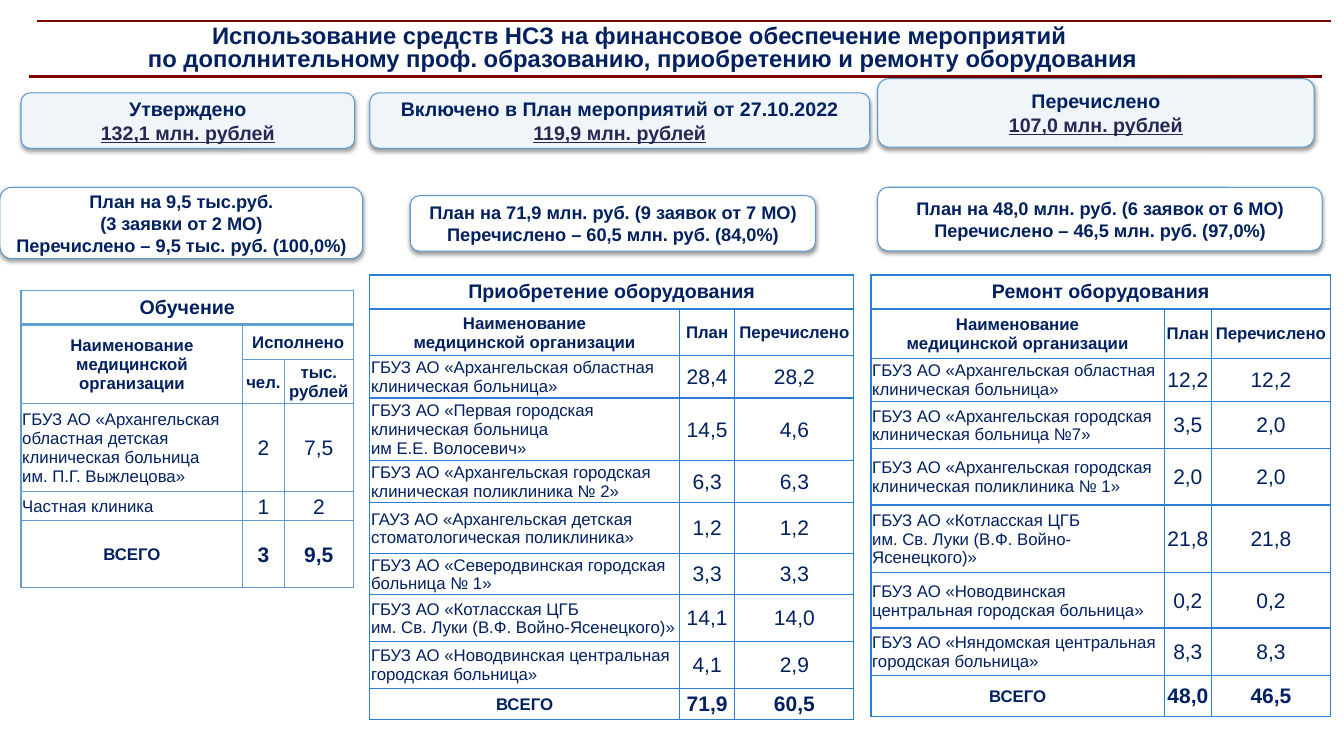
from lxml import etree
from pptx import Presentation
from pptx import util as u
from pptx.dml.color import RGBColor
from pptx.enum import shapes, text
from pptx.oxml import parse_xml
from pptx.oxml.ns import nsdecls, qn

Cm = u.Cm
HUES = {"navy": "002060", "ink": "242852", "white": "FFFFFF", "pale": "F0F5FA",
        "edge": "5D9ACF", "soft": "629DD1", "grid": "297FD5", "rule": "800000"}
MID = text.PP_ALIGN.CENTER
LEFT = text.PP_ALIGN.LEFT
ROUND = shapes.MSO_SHAPE.ROUNDED_RECTANGLE
ALT = shapes.MSO_SHAPE.FLOWCHART_ALTERNATE_PROCESS


def rgb(name):
    return RGBColor.from_string(HUES[name])


def put(frame, words, size=12, bold=True, hue="navy", align=MID, under=False, space=None):
    """Add one paragraph; a newline in words becomes a line break."""
    para = frame.paragraphs[0] if not frame.text else frame.add_paragraph()
    para.text = words
    para.alignment = align
    if space:
        para.line_spacing = space
    for run in para.runs:
        font = run.font
        font.name, font.size, font.bold = "Arial", u.Pt(size), bold
        font.color.rgb = rgb(hue)
        if under:
            font.underline = True


def title(slide, box, words):
    frame = slide.shapes.add_textbox(*map(Cm, box)).text_frame
    frame.word_wrap = True
    frame.vertical_anchor = text.MSO_ANCHOR.MIDDLE
    put(frame, words, size=17, space=0.8)


def rule(slide, left, right, top, width):
    line = slide.shapes.add_connector(
        shapes.MSO_CONNECTOR.STRAIGHT, Cm(left), Cm(top), Cm(right), Cm(top))
    line.line.color.rgb = rgb("rule")
    line.line.width = u.Pt(width)
    etree.SubElement(line._element.spPr, qn("a:effectLst"))


def card(slide, box, kind=ALT, fill="white"):
    """Draw a rounded card with a soft shadow and return its text frame."""
    shape = slide.shapes.add_shape(kind, *map(Cm, box))
    shape.fill.solid()
    shape.fill.fore_color.rgb = rgb(fill)
    shape.line.color.rgb = rgb("edge")
    shape.line.width = u.Pt(0.75)
    shape.shadow.inherit = False
    shape._element.spPr.find(qn("a:effectLst")).append(parse_xml(
        f'<a:outerShdw {nsdecls("a")} blurRad="{u.Pt(3.1)}" dist="{u.Pt(1.6)}" '
        'dir="5400000" rotWithShape="0"><a:srgbClr val="000000">'
        '<a:alpha val="38000"/></a:srgbClr></a:outerShdw>'))
    frame = shape.text_frame
    frame.word_wrap = True
    frame.vertical_anchor = text.MSO_ANCHOR.MIDDLE
    frame.margin_left = frame.margin_right = 0
    return frame


def total(slide, box, label, sum_):
    frame = card(slide, box, fill="pale")
    put(frame, label, size=14)
    put(frame, sum_, size=14, hue="ink", under=True)


def detail(slide, box, lines, kind=ALT):
    frame = card(slide, box, kind)
    for line in lines:
        put(frame, line, size=13)


def edge(cell, hue, base):
    props = cell._tc.get_or_add_tcPr()
    for i, side in enumerate("LRTB"):
        width = u.Pt(base if side == "B" else 1)
        props.insert(i, parse_xml(
            f'<a:ln{side} {nsdecls("a")} w="{width}"><a:solidFill>'
            f'<a:srgbClr val="{HUES[hue]}"/></a:solidFill></a:ln{side}>'))


def grid(slide, left, top, cols, highs, rows, head=2, spans=(), hue="grid", fill="white"):
    """Place a table: a title row, further header rows, names with figures, a total."""
    table = slide.shapes.add_table(
        len(highs), len(cols), Cm(left), Cm(top), Cm(sum(cols)), Cm(sum(highs))).table
    table.first_row = table.horz_banding = False
    for col, width in zip(table.columns, cols):
        col.width = Cm(width)
    for row, high in zip(table.rows, highs):
        row.height = Cm(high)
    last = len(rows) - 1
    for r, row in enumerate(rows):
        for c in range(len(cols)):
            cell = table.cell(r, c)
            cell.vertical_anchor = text.MSO_ANCHOR.MIDDLE
            cell.margin_left = cell.margin_right = Cm(0.03 if r else 0.33)
            cell.margin_top = Cm(0.03 if r else 0.13)
            cell.margin_bottom = Cm(0 if r else 0.13)
            if fill and r >= head:
                cell.fill.solid()
                cell.fill.fore_color.rgb = rgb(fill)
            else:
                cell.fill.background()
            edge(cell, hue, 1 if r else 2)
            words = row[c] if c < len(row) else ""
            if not words:
                continue
            if r < head:
                for line in words.split("\n"):
                    put(cell.text_frame, line, size=12 if r else 14)
            else:
                put(cell.text_frame, words, size=15 if c else 12, bold=r == last,
                    align=MID if c or r == last else LEFT)
    for r, c, end, stop in ((0, 0, 0, len(cols) - 1), *spans):
        table.cell(r, c).merge(table.cell(end, stop))


ORG = "Наименование\nмедицинской организации"
HEAD = (ORG, "План", "Перечислено")
STUDY = [
    ("Обучение",),
    (ORG, "Исполнено"),
    ("", "чел.", "тыс. рублей"),
    ("ГБУЗ АО «Архангельская областная детская клиническая больница \n"
     "им. П.Г. Выжлецова»", "2", "7,5"),
    ("Частная клиника", "1", "2"),
    ("ВСЕГО", "3", "9,5")]
BUY = [
    ("Приобретение оборудования",),
    HEAD,
    ("ГБУЗ АО «Архангельская областная клиническая больница»", "28,4", "28,2"),
    ("ГБУЗ АО «Первая городская клиническая больница \nим Е.Е. Волосевич»", "14,5", "4,6"),
    ("ГБУЗ АО «Архангельская городская клиническая поликлиника № 2»", "6,3", "6,3"),
    ("ГАУЗ АО «Архангельская детская стоматологическая поликлиника»", "1,2", "1,2"),
    ("ГБУЗ АО «Северодвинская городская больница № 1»", "3,3", "3,3"),
    ("ГБУЗ АО «Котласская ЦГБ \nим. Св. Луки (В.Ф. Войно-Ясенецкого)»", "14,1", "14,0"),
    ("ГБУЗ АО «Новодвинская центральная городская больница»", "4,1", "2,9"),
    ("ВСЕГО", "71,9", "60,5")]
REPAIR = [
    ("Ремонт оборудования",),
    HEAD,
    ("ГБУЗ АО «Архангельская областная клиническая больница»", "12,2", "12,2"),
    ("ГБУЗ АО «Архангельская городская клиническая больница №7»", "3,5", "2,0"),
    ("ГБУЗ АО «Архангельская городская клиническая поликлиника № 1»", "2,0", "2,0"),
    ("ГБУЗ АО «Котласская ЦГБ \nим. Св. Луки (В.Ф. Войно-Ясенецкого)»", "21,8", "21,8"),
    ("ГБУЗ АО «Новодвинская центральная городская больница»", "0,2", "0,2"),
    ("ГБУЗ АО «Няндомская центральная городская больница»", "8,3", "8,3"),
    ("ВСЕГО", "48,0", "46,5")]


def main():
    deck = Presentation()
    deck.slide_width, deck.slide_height = Cm(33.87), Cm(19.05)
    slide = deck.slides.add_slide(deck.slide_layouts[6])

    title(slide, (-0.46, 0.74, 33.32, 0.99),
          "Использование средств НСЗ на финансовое обеспечение мероприятий \n"
          "по дополнительному проф. образованию, приобретению и ремонту оборудования")
    rule(slide, 0.94, 33.53, 0.53, 1.5)
    rule(slide, 0.74, 33.32, 1.93, 2.25)

    total(slide, (0.53, 2.34, 8.41, 1.4), "Утверждено", "132,1 млн. рублей")
    total(slide, (9.32, 2.34, 12.6, 1.4),
          "Включено в План мероприятий от 27.10.2022", "119,9 млн. рублей")
    total(slide, (22.12, 1.98, 11, 1.73), "Перечислено", "107,0 млн. рублей")

    detail(slide, (0, 4.72, 9.14, 1.8),
           ("План на 9,5 тыс.руб.", "(3 заявки от 2 МО)",
            "Перечислено – 9,5 тыс. руб. (100,0%)"), ROUND)
    detail(slide, (10.34, 4.93, 10.21, 1.4),
           ("План на 71,9 млн. руб. (9 заявок от 7 МО)",
            "Перечислено – 60,5 млн. руб. (84,0%)"))
    detail(slide, (22.12, 4.72, 11.2, 1.6),
           ("План на 48,0 млн. руб. (6 заявок от 6 МО)",
            "Перечислено – 46,5 млн. руб. (97,0%)"))

    grid(slide, 0.53, 7.32, (5.59, 1.04, 1.75), (0.8, 0.88, 1.12, 2.21, 0.74, 1.68),
         STUDY, head=3, spans=((1, 0, 2, 0), (1, 1, 1, 2)), hue="soft", fill=None)
    grid(slide, 9.32, 6.93, (7.8, 1.4, 3),
         (0.86, 1.17, 1.07, 1.57, 1.07, 1.27, 0.99, 1.17, 1.19, 0.79), BUY)
    grid(slide, 21.95, 6.93, (7.39, 1.19, 3),
         (0.85, 1.24, 1.09, 1.19, 1.42, 1.7, 1.4, 1.19, 1.04), REPAIR)
    deck.save("out.pptx")


if __name__ == "__main__":
    main()
